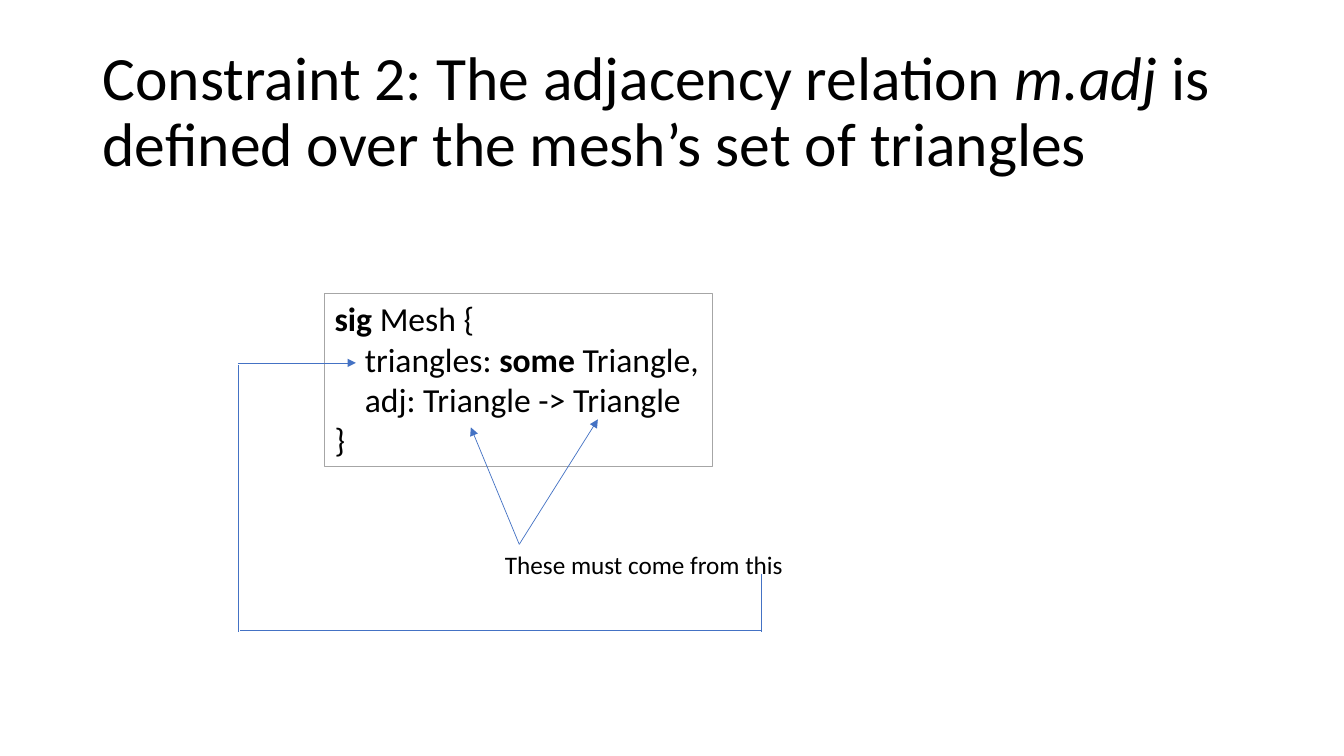
import pptx
import pptx.util
import pptx.dml.color
import pptx.enum.shapes
import pptx.enum.text
import pptx.oxml.ns
from lxml import etree
from pptx.util import Inches

BLACK = pptx.dml.color.RGBColor(0x00, 0x00, 0x00)
GRAY = pptx.dml.color.RGBColor(0xA6, 0xA6, 0xA6)
BLUE = pptx.dml.color.RGBColor(0x44, 0x72, 0xC4)


class SlideBuilder:
    """Holds the style and current slide, and adds each kind of element."""

    font = "Calibri"

    def __init__(self, s):
        self.s = s

    def text(self, left, top, width, height, size, lines, wrap=True):
        sp = self.s.shapes.add_textbox(
            Inches(left), Inches(top), Inches(width), Inches(height))
        tf = sp.text_frame
        tf.word_wrap = wrap
        for i, (indent, runs) in enumerate(lines):
            p = tf.paragraphs[0] if i == 0 else tf.add_paragraph()
            p.font.name = self.font
            p.font.size = pptx.util.Pt(size)
            p.font.color.rgb = BLACK
            if indent:
                p._p.get_or_add_pPr().set("marL", str(Inches(indent)))
            for words, style in runs:
                r = p.add_run()
                r.text = words
                if style == "bold":
                    r.font.bold = True
                elif style == "italic":
                    r.font.italic = True
        return sp

    def title(self, left, top, width, height, runs):
        sp = self.text(left, top, width, height, 44, [(0, runs)])
        sp.text_frame.vertical_anchor = pptx.enum.text.MSO_ANCHOR.MIDDLE
        sp.text_frame.paragraphs[0].line_spacing = 0.9

    def code(self, left, top, width, height, lines):
        sp = self.text(left, top, width, height, 24, lines)
        sp.line.color.rgb = GRAY
        sp.line.width = pptx.util.Pt(0.75)

    def line(self, start, end, arrow=False):
        c = self.s.shapes.add_connector(
            pptx.enum.shapes.MSO_CONNECTOR.STRAIGHT,
            *map(Inches, start + end))
        c.line.color.rgb = BLUE
        c.line.width = pptx.util.Pt(0.5)
        if arrow:
            etree.SubElement(c.line._get_or_add_ln(),
                             pptx.oxml.ns.qn("a:tailEnd"), type="triangle")
        etree.SubElement(c._element.spPr, pptx.oxml.ns.qn("a:effectLst"))


def main():
    prs = pptx.Presentation()
    prs.slide_width, prs.slide_height = Inches(13.33), Inches(7.5)
    b = SlideBuilder(prs.slides.add_slide(prs.slide_layouts[6]))

    b.title(0.92, 0.4, 11.5, 1.45, [
        ("Constraint 2: The adjacency relation ", ""),
        ("m.adj", "italic"),
        (" is defined over the mesh’s set of triangles", ""),
    ])
    b.code(3.22, 2.91, 3.85, 1.72, [
        (0, [("sig", "bold"), (" Mesh {", "")]),
        (0.3, [("triangles: ", ""), ("some", "bold"), (" Triangle,", "")]),
        (0.3, [("adj: Triangle -> Triangle", "")]),
        (0, [("}", "")]),
    ])
    for target in ((4.67, 4.24), (5.93, 4.16)):
        b.line((5.15, 5.4), target, arrow=True)
    b.text(4.91, 5.4, 2.99, 0.4, 18,
           [(0, [("These must come from this", "")])], wrap=False)

    b.line((7.55, 5.69), (7.55, 6.27))
    b.line((7.56, 6.25), (2.38, 6.25))
    b.line((2.36, 6.27), (2.36, 3.62))
    b.line((2.36, 3.6), (3.53, 3.6), arrow=True)

    prs.save("out.pptx")


if __name__ == "__main__":
    main()
